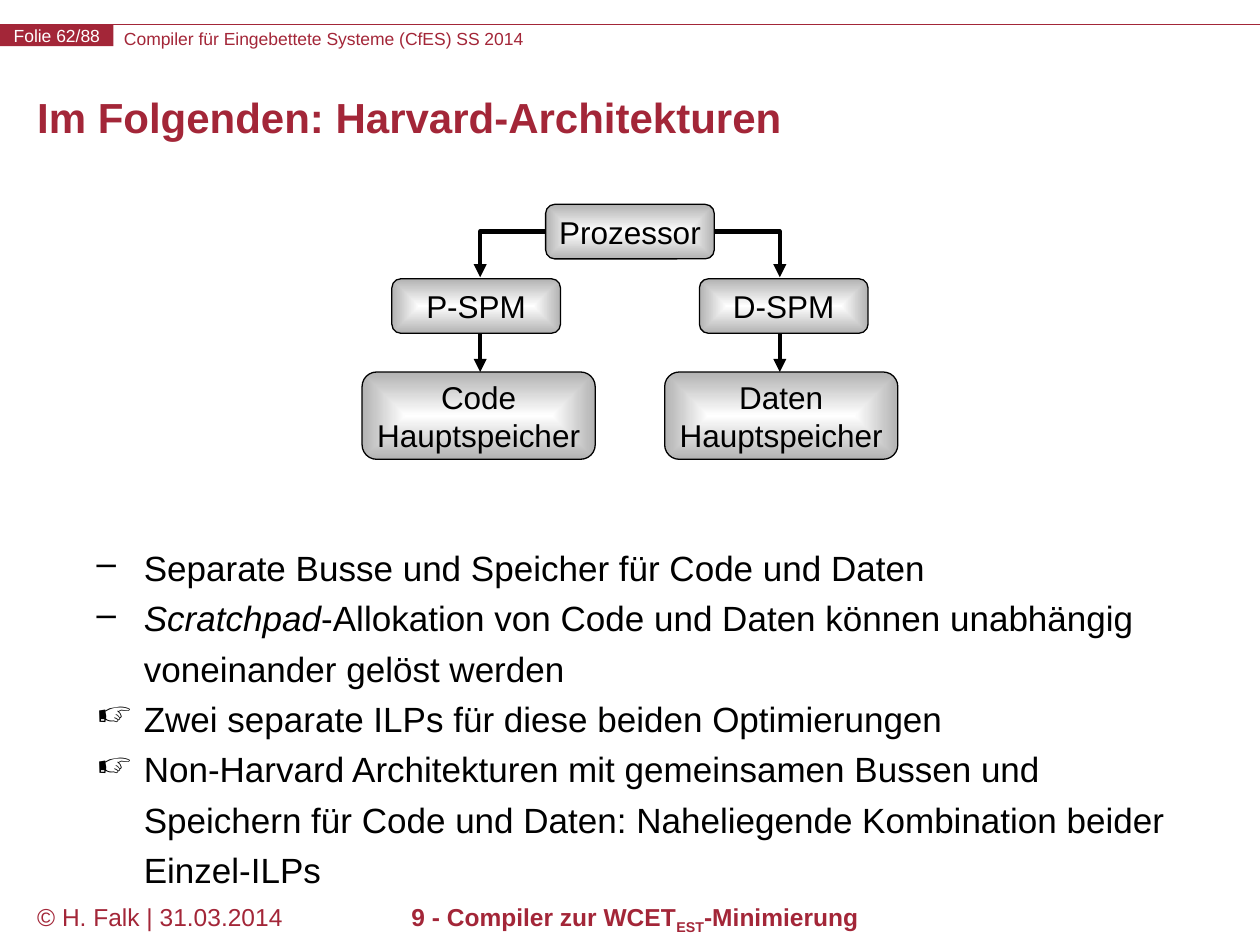
"""Slide on Harvard architectures: memory hierarchy diagram above a list of consequences."""
from lxml import etree
from pptx import Presentation
from pptx.dml.color import RGBColor
from pptx.enum.shapes import MSO_CONNECTOR, MSO_SHAPE
from pptx.enum.text import MSO_ANCHOR, PP_ALIGN
from pptx.oxml import parse_xml
from pptx.oxml.ns import nsdecls, qn
from pptx.util import Cm, Pt

RECT, ROUND = MSO_SHAPE.RECTANGLE, MSO_SHAPE.ROUNDED_RECTANGLE
STRAIGHT = MSO_CONNECTOR.STRAIGHT
TOP, MIDDLE = MSO_ANCHOR.TOP, MSO_ANCHOR.MIDDLE
LEFT, CENTER = PP_ALIGN.LEFT, PP_ALIGN.CENTER
RED = RGBColor(0xA3, 0x26, 0x38)
BLACK = RGBColor(0, 0, 0)
WHITE = RGBColor(255, 255, 255)
GREY = RGBColor(0xB2, 0xB2, 0xB2)
FONT = "Arial"

PAGE = "Folie 62/88"
TEXTS = [
    {"box": (2.5, 0.56, 16.76, 0.43), "runs": [("Compiler für Eingebettete Systeme (CfES) SS 2014", {})],
     "size": 10, "inset": False},
    {"box": (0.5, 18.06, 5.6, 1.27), "runs": [("© H. Falk | 31.03.2014", {})], "size": 14},
    {"box": (5.1, 18.06, 15.4, 1.27), "size": 14, "bold": True, "align": CENTER,
     "runs": [("9 - Compiler zur WCET", {}), ("EST", {"baseline": "-25000"}), ("-Minimierung", {})]},
    {"box": (0.5, 1.52, 24.4, 1.83), "runs": [("Im Folgenden: Harvard-Architekturen", {})],
     "size": 24, "bold": True, "anchor": MIDDLE, "spacing": Pt(24)},
]
BULLETS = [
    ("–", [("Separate Busse und Speicher für Code und Daten", {})]),
    ("–", [("Scratchpad", {"i": "1"}),
           ("-Allokation von Code und Daten können unabhängig voneinander gelöst werden", {})]),
    ("☞", [("Zwei separate ILPs für diese beiden Optimierungen", {})]),
    ("☞", [("Non-Harvard Architekturen mit gemeinsamen Bussen und Speichern für Code und Daten: "
            "Naheliegende Kombination beider Einzel-ILPs", {})]),
]
BODY_BOX = (1.7, 10.72, 22.4, 7.44)
INDENT = 0.95

MID = 12.7
SMALL, LARGE = (3.4, 1.1), (4.7, 1.76)
LEVELS = [
    (4.12, SMALL, [(0, "Prozessor")]),
    (5.62, SMALL, [(-3.1, "P-SPM"), (3.1, "D-SPM")]),
    (7.5, LARGE, [(-3.05, "Code Hauptspeicher"), (3.05, "Daten Hauptspeicher")]),
]
ARROW_DX = 3.02


def add_runs(p, runs, size, color, bold=False):
    for text, extra in runs:
        r = p.add_run()
        r.text = text
        for name, value in {"name": FONT, "size": Pt(size), "bold": bold}.items():
            setattr(r.font, name, value)
        r.font.color.rgb = color
        for name, value in extra.items():
            r.font._element.set(name, value)


def format_frame(tf, anchor=TOP, wrap=True, inset=True):
    tf.word_wrap = wrap
    tf.vertical_anchor = anchor
    if not inset:
        for side in ("left", "right", "top", "bottom"):
            setattr(tf, f"margin_{side}", 0)


def add_text(slide, box, runs, size, bold=False, align=LEFT, anchor=TOP, spacing=None, inset=True):
    tf = slide.shapes.add_textbox(*map(Cm, box)).text_frame
    format_frame(tf, anchor, inset=inset)
    p = tf.paragraphs[0]
    p.alignment, p.line_spacing = align, spacing
    add_runs(p, runs, size, RED, bold)


def add_label_shape(slide, kind, box, text, size, color, wrap=True):
    sp = slide.shapes.add_shape(kind, *map(Cm, box))
    sp.shadow.inherit = False
    format_frame(sp.text_frame, MIDDLE, wrap, inset=False)
    p = sp.text_frame.paragraphs[0]
    p.alignment = CENTER
    add_runs(p, [(text, {})], size, color)
    return sp


def add_node(slide, center, top, size, text):
    w, h = size
    sp = add_label_shape(slide, ROUND, (center - w / 2, top, w, h), text, 18, BLACK)
    sp.line.color.rgb = BLACK
    sp.line.width = Pt(0.75)
    sp.fill.background()
    spPr = sp.element.spPr
    spPr.replace(spPr.find(qn("a:noFill")), parse_xml(
        f'<a:gradFill {nsdecls("a")} rotWithShape="1"><a:gsLst>'
        f'<a:gs pos="0"><a:srgbClr val="{WHITE}"/></a:gs>'
        f'<a:gs pos="100000"><a:srgbClr val="{GREY}"/></a:gs></a:gsLst>'
        '<a:path path="shape"><a:fillToRect l="50000" t="50000" r="50000" b="50000"/></a:path>'
        '</a:gradFill>'))


def add_line(slide, start, end, color, width):
    sp = slide.shapes.add_connector(STRAIGHT, *map(Cm, start + end))
    sp.line.color.rgb = color
    sp.line.width = Pt(width)
    etree.SubElement(sp.element.spPr, qn("a:effectLst"))
    return sp


def add_arrowhead(sp):
    ln = sp.element.spPr.find(qn("a:ln"))
    etree.SubElement(ln, qn("a:tailEnd"), type="triangle")


def add_branch(slide, side):
    x = MID + side * ARROW_DX
    proc_top, (w, h), _ = LEVELS[0]
    spm_top, (_, spm_h), _ = LEVELS[1]
    y = proc_top + h / 2
    builder = slide.shapes.build_freeform(Cm(MID + side * w / 2), Cm(y))
    builder.add_line_segments([(Cm(x), Cm(y)), (Cm(x), Cm(spm_top - 0.03))], close=False)
    elbow = builder.convert_to_shape()
    elbow.shadow.inherit = False
    elbow.fill.background()
    elbow.line.color.rgb = BLACK
    elbow.line.width = Pt(2.5)
    down = add_line(slide, (x, spm_top + spm_h), (x, LEVELS[2][0]), BLACK, 2.5)
    for sp in (elbow, down):
        add_arrowhead(sp)


def add_bullets(slide):
    tf = slide.shapes.add_textbox(*map(Cm, BODY_BOX)).text_frame
    format_frame(tf)
    for i, (mark, runs) in enumerate(BULLETS):
        p = tf.add_paragraph() if i else tf.paragraphs[0]
        p.line_spacing = 1.2
        pPr = p._p.get_or_add_pPr()
        pPr.set("marL", str(Cm(INDENT)))
        pPr.set("indent", str(-Cm(INDENT)))
        etree.SubElement(pPr, qn("a:buChar"), char=mark)
        add_runs(p, runs, 20, BLACK)


def main():
    prs = Presentation()
    prs.slide_width, prs.slide_height = Cm(25.4), Cm(19.05)
    slide = prs.slides.add_slide(prs.slide_layouts[6])
    add_line(slide, (0, 0.5), (25.4, 0.5), RED, 0.75)
    sp = add_label_shape(slide, RECT, (0, 0.5, 2.29, 0.43), PAGE, 10, WHITE, wrap=False)
    sp.fill.solid()
    sp.fill.fore_color.rgb = RED
    sp.line.fill.background()
    for item in TEXTS:
        add_text(slide, **item)
    add_bullets(slide)
    for side in (-1, 1):
        add_branch(slide, side)
    for top, size, nodes in LEVELS:
        for dx, text in nodes:
            add_node(slide, MID + dx, top, size, text)
    prs.save("out.pptx")


if __name__ == "__main__":
    main()
